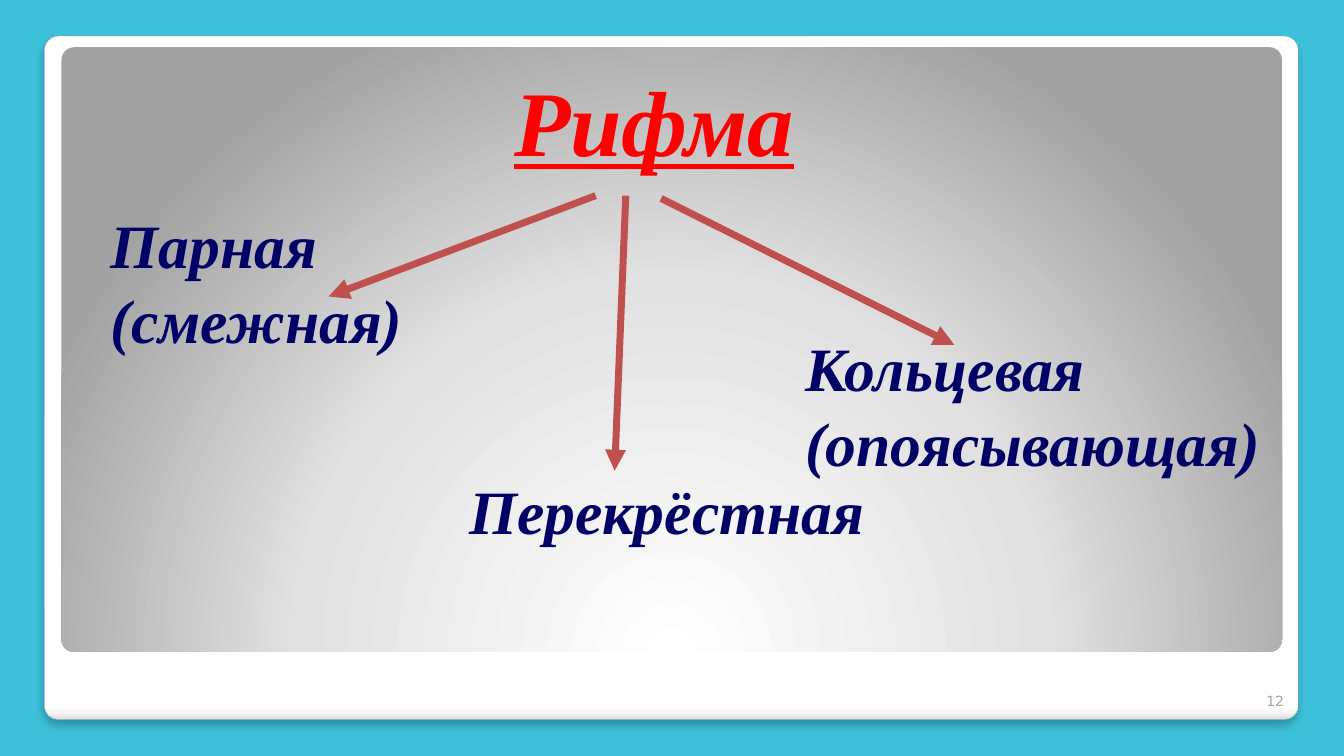
from dataclasses import dataclass

from lxml.etree import SubElement
from pptx import Presentation
from pptx.dml.color import RGBColor
from pptx.enum.shapes import MSO_CONNECTOR, MSO_SHAPE
from pptx.enum.text import MSO_ANCHOR, PP_ALIGN
from pptx.oxml.ns import qn
from pptx.util import Cm, Pt

TITLE = ("Рифма", (12.7, 1.47, 13.54, 5.89))
RHYMES = [
    (("Парная", "(смежная)"), (2.54, 5.08, 7.92, 4.01), 0.13),
    (("Перекрёстная",), (11.58, 10.59, 10.54, 3.33), 1.32),
    (("Кольцевая", "(опоясывающая)"), (20.04, 6.98, 12.06, 5.21), 1.32),
]
ARROWS = [
    (16.66, 5, 24.05, 8.69),
    (15.77, 4.93, 15.49, 11.86),
    (15.01, 4.93, 8.28, 7.47),
]
NUMBER = ("12", (30.91, 16.97, 1.7, 1.02))
FRAME = (1.12, 0.91, 31.6, 17.22)
PANEL = (1.55, 1.19, 30.76, 15.24)


@dataclass(frozen=True)
class Theme:
    """Colours, fonts and type sizes of the slide."""

    background: str = "3DC1DB"
    frame_line: str = "A4A4A4"
    title: str = "FF0000"
    rhyme: str = "000066"
    arrow: str = "C0504D"
    number: str = "A8A49B"
    shadow: str = "000000"
    frame_stops: tuple = ((0, "FFFFFF"), (98, "FFFFFF"), (99, "F7F7F7"), (100, "DADADA"))
    panel_stops: tuple = ((0, "FFFFFF"), (55, "E1E1E1"), (100, "A2A2A2"))
    serif: str = "Times New Roman"
    sans: str = "DejaVu Sans"
    title_size: int = 66
    rhyme_size: int = 44
    number_size: int = 10
    arrow_width: int = 5
    line_height: float = 1.21


THEME = Theme()


def color(value):
    """Turn a hex string into a colour."""
    return RGBColor.from_string(value)


def add(parent, tag, **attributes):
    """Append a drawing element with the given attributes."""
    return SubElement(parent, qn(tag), {key: str(value) for key, value in attributes.items()})


def add_card(slide, box, stops):
    """Add a rounded card and return it with its gradient element."""
    card = slide.shapes.add_shape(MSO_SHAPE.ROUNDED_RECTANGLE, *map(Cm, box))
    card.adjustments[0] = 0.021
    card.shadow.inherit = False
    card.line.fill.background()
    properties = card.element.spPr
    gradient = add(properties, "a:gradFill", rotWithShape=1)
    properties.find(qn("a:prstGeom")).addnext(gradient)
    stop_list = add(gradient, "a:gsLst")
    for position, value in stops:
        stop = add(stop_list, "a:gs", pos=position * 1000)
        add(stop, "a:srgbClr", val=value)
    return card, gradient


def add_frame(slide):
    """Add the white outer card with its shadow."""
    frame, gradient = add_card(slide, FRAME, THEME.frame_stops)
    add(gradient, "a:lin", ang=5400000, scaled=0)
    frame.line.color.rgb = color(THEME.frame_line)
    frame.line.width = Pt(0.16)
    effects = frame.element.spPr.find(qn("a:effectLst"))
    shadow = add(effects, "a:outerShdw", blurRad=Pt(6), dist=Pt(4), dir=5400000,
                 algn="t", rotWithShape=0)
    shadow_color = add(shadow, "a:srgbClr", val=THEME.shadow)
    add(shadow_color, "a:alpha", val=25000)


def add_panel(slide):
    """Add the grey panel that glows from its lower edge."""
    _, gradient = add_card(slide, PANEL, THEME.panel_stops)
    path = add(gradient, "a:path", path="circle")
    add(path, "a:fillToRect", l=50000, t=175000, r=50000, b=-75000)


def write(frame, lines, size, value, font=THEME.serif, accent=True, align=PP_ALIGN.LEFT):
    """Write one paragraph per line into a text frame."""
    for index, text in enumerate(lines):
        paragraph = frame.add_paragraph() if index else frame.paragraphs[0]
        paragraph.alignment = align
        paragraph.line_spacing = Pt(round(size * THEME.line_height, 1))
        run = paragraph.add_run()
        run.text = text
        run.font.name = font
        run.font.size = Pt(size)
        run.font.bold = run.font.italic = accent
        run.font.color.rgb = color(value)


def add_title(slide):
    """Place the title above the cards."""
    text, box = TITLE
    title = slide.shapes.title
    title.left, title.top, title.width, title.height = map(Cm, box)
    title.element.getparent().append(title.element)
    frame = title.text_frame
    frame.word_wrap = True
    frame.vertical_anchor = MSO_ANCHOR.TOP
    write(frame, [text], THEME.title_size, THEME.title)
    frame.paragraphs[0].runs[0].font.underline = True


def add_rhyme(slide, lines, box, top_margin):
    """Add the name of one kind of rhyme."""
    frame = slide.shapes.add_textbox(*map(Cm, box)).text_frame
    frame.word_wrap = False
    frame.margin_top = Cm(top_margin)
    write(frame, lines, THEME.rhyme_size, THEME.rhyme)


def add_arrow(slide, ends):
    """Add an arrow from the title to a kind of rhyme."""
    arrow = slide.shapes.add_connector(MSO_CONNECTOR.STRAIGHT, *map(Cm, ends))
    arrow.line.color.rgb = color(THEME.arrow)
    arrow.line.width = Pt(THEME.arrow_width)
    add(arrow.line._get_or_add_ln(), "a:tailEnd", type="triangle")
    add(arrow.element.spPr, "a:effectLst")


def add_number(slide):
    """Add the slide number in the lower right corner."""
    text, box = NUMBER
    frame = slide.shapes.add_textbox(*map(Cm, box)).text_frame
    frame.word_wrap = True
    frame.vertical_anchor = MSO_ANCHOR.BOTTOM
    write(frame, [text], THEME.number_size, THEME.number, THEME.sans, False, PP_ALIGN.RIGHT)


def main():
    """Build and save the slide."""
    presentation = Presentation()
    presentation.slide_width, presentation.slide_height = Cm(33.87), Cm(19.05)
    slide = presentation.slides.add_slide(presentation.slide_layouts[5])
    slide.background.fill.solid()
    slide.background.fill.fore_color.rgb = color(THEME.background)
    add_frame(slide)
    add_panel(slide)
    add_title(slide)
    for lines, box, top_margin in RHYMES:
        add_rhyme(slide, lines, box, top_margin)
    for ends in ARROWS:
        add_arrow(slide, ends)
    add_number(slide)
    presentation.save("out.pptx")


if __name__ == "__main__":
    main()
